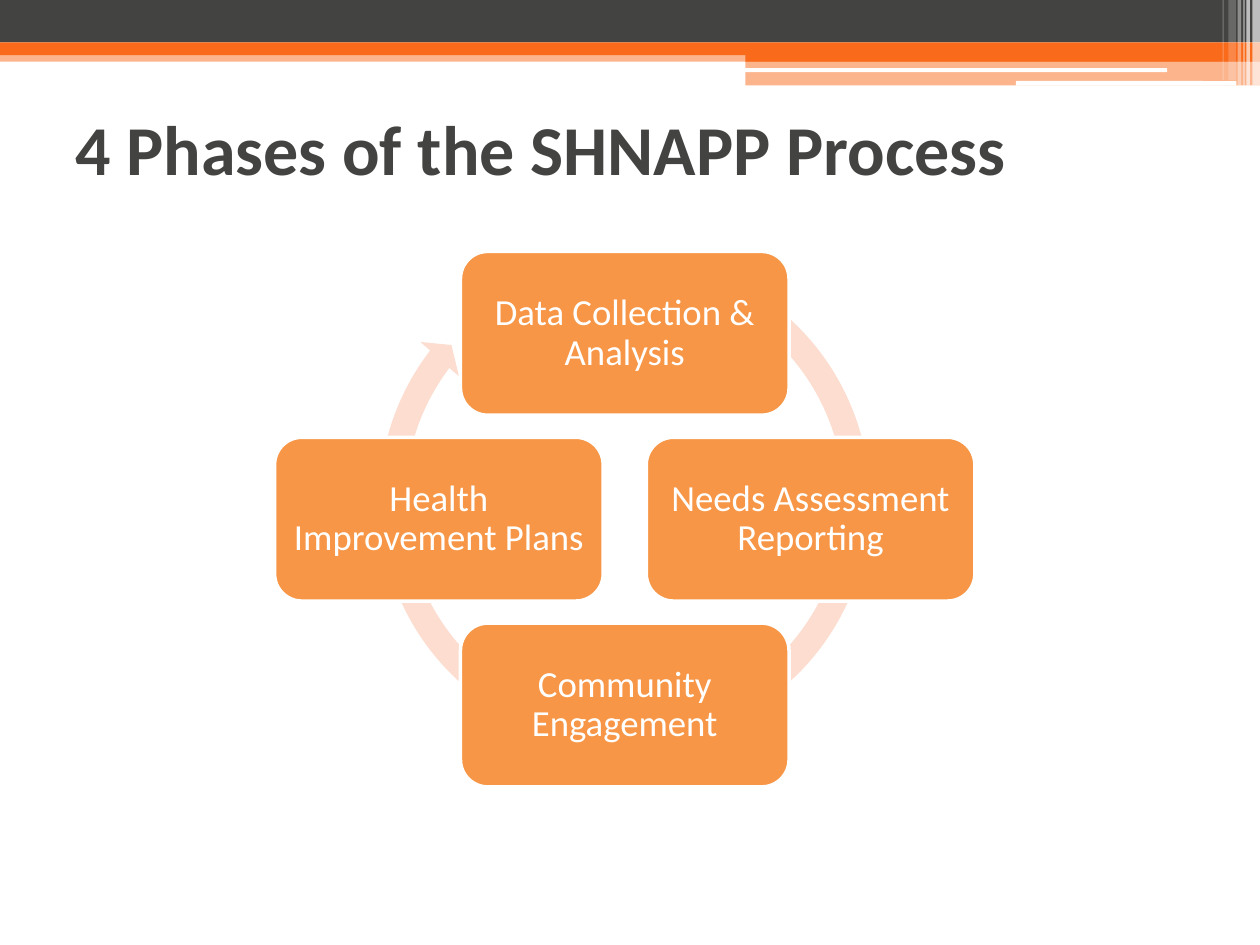
import pptx
import pptx.util
import pptx.dml.color
import pptx.enum.shapes
import pptx.enum.text
import lxml.etree
from pptx.oxml.ns import qn

Pt = pptx.util.Pt
RGB = pptx.dml.color.RGBColor.from_string
SHAPE = pptx.enum.shapes.MSO_SHAPE
ALIGN = pptx.enum.text.PP_ALIGN
MIDDLE = pptx.enum.text.MSO_ANCHOR.MIDDLE
COLORS = {"dark": "434342", "accent": "F96A1B", "white": "FFFFFF",
          "ring": "FCDDCF", "box": "F79646"}

prs = pptx.Presentation()
prs.slide_width, prs.slide_height = Pt(720), Pt(540)
s = prs.slides.add_slide(prs.slide_layouts[6])


def add_filled(kind, left, top, width, height, color, opacity=100):
    sp = s.shapes.add_shape(kind, Pt(left), Pt(top), Pt(width), Pt(height))
    sp.shadow.inherit = False
    sp.fill.solid()
    sp.fill.fore_color.rgb = RGB(COLORS[color])
    sp.line.fill.background()
    if opacity < 100:
        clr = sp.fill._xPr.find(qn("a:solidFill"))[0]
        lxml.etree.SubElement(clr, qn("a:alpha")).set("val", str(opacity * 1000))
    return sp


def write_text(sp, text, inset, align, font):
    tf = sp.text_frame
    frame = {"word_wrap": True, "vertical_anchor": MIDDLE, "margin_left": Pt(inset),
             "margin_right": Pt(inset), "margin_top": Pt(inset), "margin_bottom": Pt(inset)}
    for name, value in frame.items():
        setattr(tf, name, value)
    p = tf.paragraphs[0]
    p.alignment = align
    r = p.add_run()
    r.text = text
    r.font.color.rgb = RGB(COLORS[font["color"]])
    for name in ("name", "size", "bold"):
        setattr(r.font, name, font[name])
    return p


# Header bands: left, top, width, height, colour, opacity
bands = [
    (0, 28.8, 720, 6.5, "accent", 50),
    (0, 0, 720, 24.3, "dark", 100),
    (0, 24.3, 720, 7.2, "accent", 100),
    (426, 28, 294, 7.2, "accent", 100),
    (426, 34.9, 294, 14, "accent", 50),
]
for band in bands:
    add_filled(SHAPE.RECTANGLE, *band)

# White rounded strips cut into the header
for left, top, width, height in [(425.5, 39, 241.5, 2.2), (580.5, 46.3, 126, 2.7)]:
    add_filled(SHAPE.ROUNDED_RECTANGLE, left, top, width, height, "white")

# Translucent stripes at the right edge: left, width, height, opacity
stripes = [
    (715.7, 4.3, 49, 65), (712.2, 2, 49, 65), (710.5, 0.7, 49, 60),
    (707.2, 2, 49, 40), (702, 4.3, 46, 20), (698.6, 0.7, 46, 30),
]
for left, width, height, opacity in stripes:
    add_filled(SHAPE.RECTANGLE, left, 0, width, height, "white", opacity)

# Title
title = s.shapes.add_textbox(Pt(36), Pt(42), Pt(648), Pt(84))
write_text(title, "4 Phases of the SHNAPP Process", 7.2, ALIGN.LEFT,
           {"name": "Calibri", "size": Pt(40), "bold": True, "color": "dark"})

# Circular arrow behind the phases
ring = add_filled(SHAPE.CIRCULAR_ARROW, 209.3, 138.3, 295.2, 295.2, "ring")
for i, value in enumerate([0.05, 2.73, 130.41, 178.9, 0.05]):
    ring.adjustments[i] = value

# Phase boxes, clockwise around the centre
center_x, center_y, step = 357, 296.7, 106.2
box_w, box_h = 187.8, 93.6
phases = [
    ("Data Collection & Analysis", 0, -1),
    ("Needs Assessment Reporting", 1, 0),
    ("Community Engagement", 0, 1),
    ("Health Improvement Plans", -1, 0),
]
for text, dx, dy in phases:
    sp = add_filled(SHAPE.ROUNDED_RECTANGLE, center_x + dx * step - box_w / 2,
                    center_y + dy * step - box_h / 2, box_w, box_h, "box")
    sp.line.color.rgb = RGB(COLORS["white"])
    sp.line.width = Pt(2)
    p = write_text(sp, text, 6.3, ALIGN.CENTER,
                   {"name": "Calibri", "size": Pt(21), "bold": False, "color": "white"})
    p.line_spacing = 0.9

prs.save("out.pptx")
